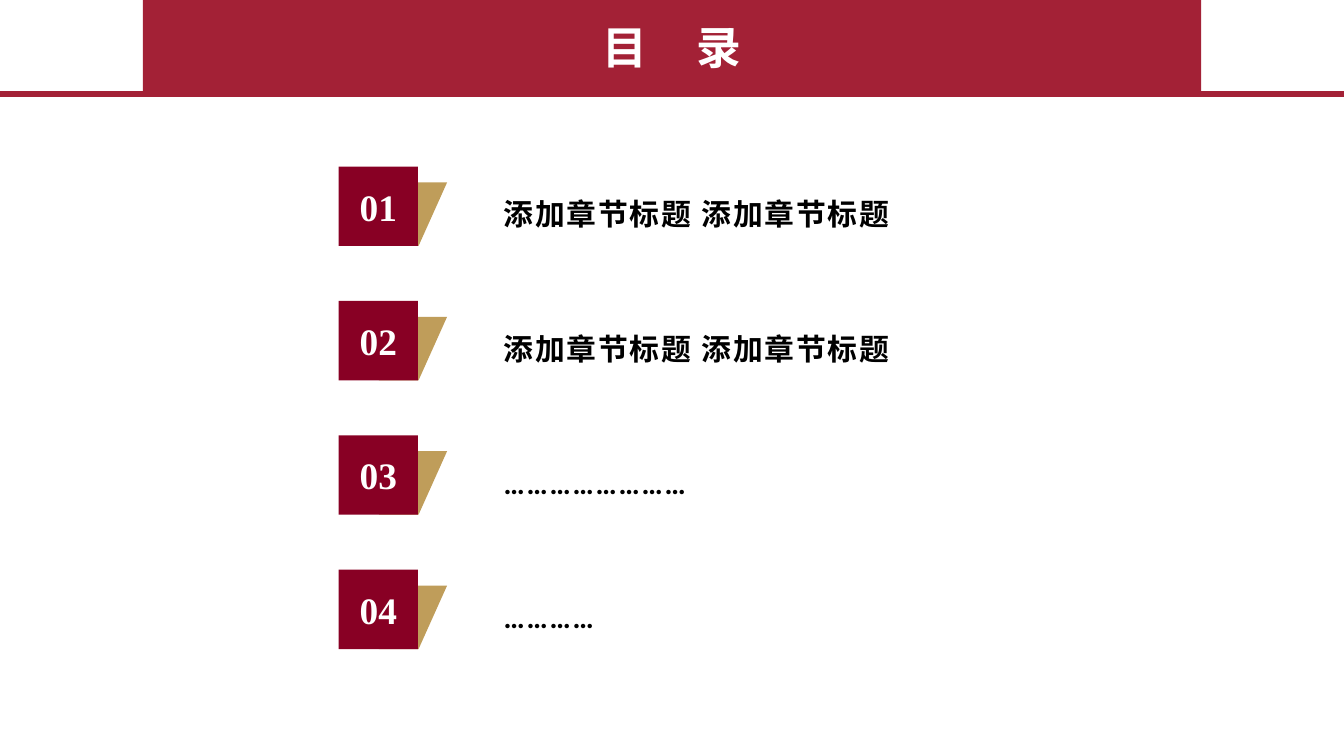
from lxml.etree import SubElement
from pptx import Presentation
from pptx.dml.color import RGBColor
from pptx.enum.shapes import MSO_CONNECTOR, MSO_SHAPE
from pptx.enum.text import MSO_ANCHOR, MSO_AUTO_SIZE, PP_ALIGN
from pptx.oxml.ns import qn
from pptx.util import Cm, Pt

COLORS = {
    "banner": "A32136",
    "number": "880024",
    "gold": "BF9D5A",
    "white": "FFFFFF",
    "black": "000000",
}
TITLE = {"size": Pt(24), "name": "Noto Sans CJK SC", "bold": True}
NUMBER = {"size": Pt(20), "name": "Times New Roman", "bold": True}
LABEL = {"size": Pt(16), "name": "Calibri", "bold": True}

SLIDE_WIDTH, SLIDE_HEIGHT = 25.4, 14.29
ROW_LEFT, ROW_TOP, ROW_PITCH = 6.4, 3.15, 2.54
SECTIONS = [
    ("添加章节标题 添加章节标题", 7.95),
    ("添加章节标题 添加章节标题", 7.95),
    ("……………………", 4.04),
    ("…………", 2.29),
]


def color(name):
    return RGBColor.from_string(COLORS[name])


def write(shape, text, font_format, color_name, alignment, spacing=0):
    """Fill a shape with one formatted run; spacing is in points."""
    paragraph = shape.text_frame.paragraphs[0]
    paragraph.alignment = alignment
    run = paragraph.add_run()
    run.text = text
    for attribute, value in font_format.items():
        setattr(run.font, attribute, value)
    run.font.color.rgb = color(color_name)
    properties = run.font._element if hasattr(run.font, "_element") else run._r.get_or_add_rPr()
    SubElement(properties, qn("a:ea"), typeface=font_format["name"])
    if spacing:
        properties.set("spc", str(spacing * 100))


def add_filled(shapes, kind, left, top, width, height, color_name):
    shape = shapes.add_shape(kind, Cm(left), Cm(top), Cm(width), Cm(height))
    shape.shadow.inherit = False
    shape.fill.solid()
    shape.fill.fore_color.rgb = color(color_name)
    shape.line.fill.background()
    return shape


def add_banner(slide, left, top, width, height):
    """Place the title block and the rule that runs across the slide."""
    rule_top = Cm(top + height - 0.02)
    rule = slide.shapes.add_connector(
        MSO_CONNECTOR.STRAIGHT, 0, rule_top, Cm(SLIDE_WIDTH), rule_top)
    rule.line.color.rgb = color("banner")
    rule.line.width = Pt(4.5 if height > 2 else 3)
    SubElement(rule._element.spPr, qn("a:effectLst"))
    add_filled(slide.shapes, MSO_SHAPE.RECTANGLE, left, top, width, height, "banner")

    title = slide.shapes.title
    title.left, title.top = Cm(left), Cm(top + 0.25)
    title.width, title.height = Cm(width), Cm(1.27)
    title.text_frame.auto_size = MSO_AUTO_SIZE.NONE
    title.text_frame.vertical_anchor = MSO_ANCHOR.MIDDLE
    write(title, "目　录", TITLE, "white", PP_ALIGN.CENTER, spacing=1)
    title.element.getparent().append(title.element)


def add_section(slide, left, top, number, text, text_width):
    """Place a numbered badge with its gold fold and the section label."""
    badge = slide.shapes.add_group_shape()
    fold = add_filled(badge.shapes, MSO_SHAPE.PARALLELOGRAM,
                      left + 0.76, top + 0.3, 1.29, 1.2, "gold")
    fold.adjustments[0] = 0.449
    square = add_filled(badge.shapes, MSO_SHAPE.RECTANGLE, left, top, 1.5, 1.5, "number")
    square.text_frame.word_wrap = False
    square.text_frame.vertical_anchor = MSO_ANCHOR.MIDDLE
    write(square, f"{number:02d}", NUMBER, "white", PP_ALIGN.CENTER)

    label = slide.shapes.add_textbox(
        Cm(left + 2.87), Cm(top + 0.43), Cm(text_width), Cm(0.94))
    label.text_frame.word_wrap = False
    label.text_frame.auto_size = MSO_AUTO_SIZE.SHAPE_TO_FIT_TEXT
    write(label, text, LABEL, "black", PP_ALIGN.LEFT, spacing=1)


def main():
    presentation = Presentation()
    presentation.slide_width = Cm(SLIDE_WIDTH)
    presentation.slide_height = Cm(SLIDE_HEIGHT)
    slide = presentation.slides.add_slide(presentation.slide_layouts[5])
    add_banner(slide, 2.7, 0, 20, 1.8)
    for index, (text, text_width) in enumerate(SECTIONS):
        add_section(slide, ROW_LEFT, ROW_TOP + index * ROW_PITCH,
                    index + 1, text, text_width)
    presentation.save("out.pptx")


if __name__ == "__main__":
    main()
